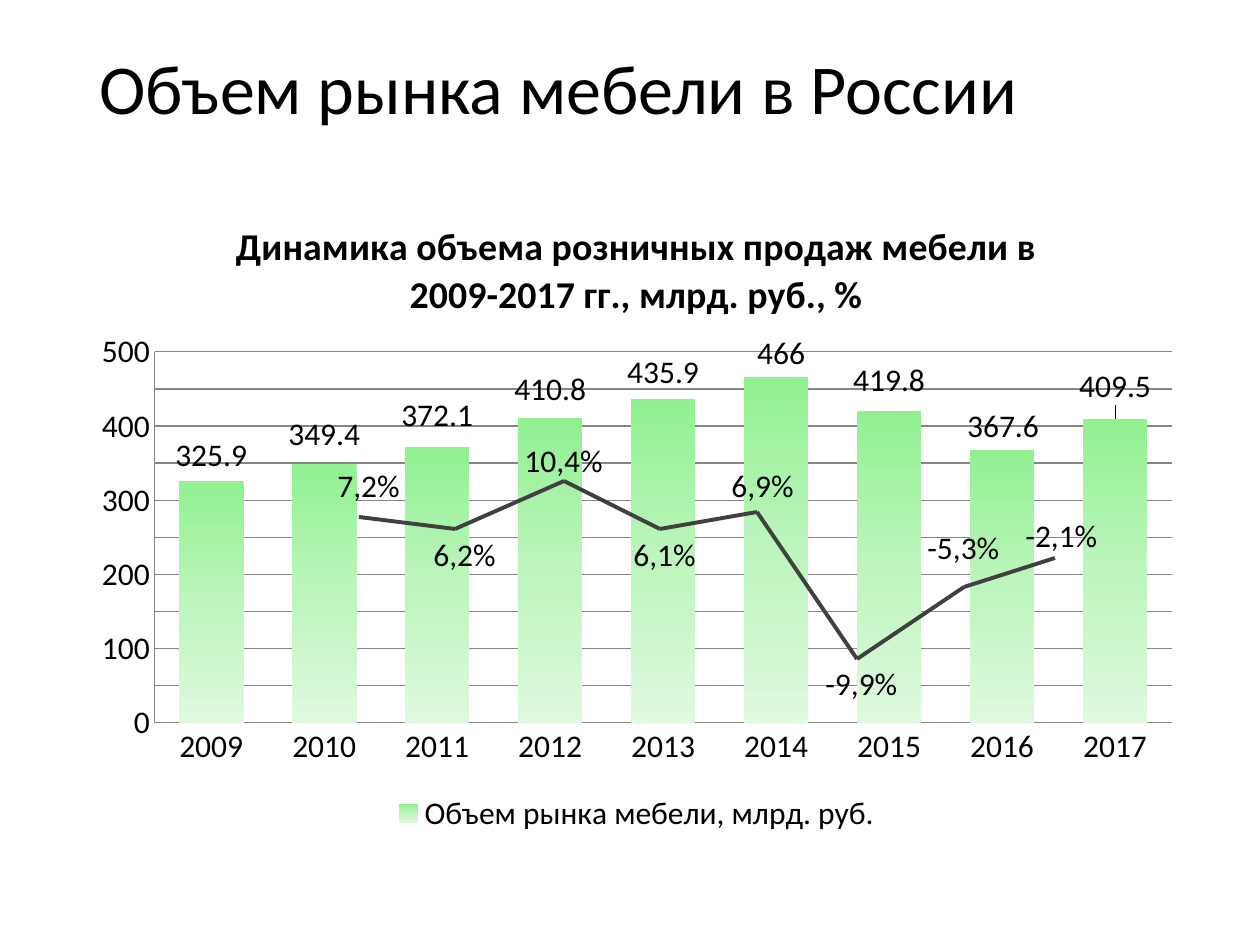
import pptx
import pptx.chart.data
import pptx.dml.color
import pptx.enum.chart
import pptx.enum.shapes
import pptx.enum.text
import pptx.oxml
import pptx.oxml.ns
import pptx.util
from lxml import etree

PX = 914400 / 126
COLORS = {"text": "000000", "line": "404040", "grid": "868686",
          "top": "91F191", "mid": "BDF5BD", "low": "DFF9DF"}
FONT = "Calibri"
qn = pptx.oxml.ns.qn


def emu(*vals):
    return [round(v * PX) for v in vals]


def rgb(name):
    return pptx.dml.color.RGBColor.from_string(COLORS[name])


def set_font(font, size=18, bold=False, color="text"):
    font.name = FONT
    font.size = pptx.util.Pt(size)
    font.bold = bold
    font.color.rgb = rgb(color)


def put_text(frame, text, spacing=None, **style):
    para = frame.paragraphs[0]
    run = para.add_run()
    run.text = text
    if spacing:
        para.line_spacing = spacing
    set_font(run.font, **style)


def layout(inner=False, **vals):
    """Manual chart layout, in shares of the chart area."""
    root = etree.Element(qn("c:layout"))
    man = etree.SubElement(root, qn("c:manualLayout"))
    if inner:
        for tag, val in (("layoutTarget", "inner"), ("xMode", "edge"), ("yMode", "edge")):
            etree.SubElement(man, qn("c:" + tag), val=val)
    for tag, val in vals.items():
        etree.SubElement(man, qn("c:" + tag), val=f"{val:.4f}")
    return root


class Deck:
    def __init__(self, wide, high):
        self.show = pptx.Presentation()
        self.show.slide_width, self.show.slide_height = emu(wide, high)
        self.slide = self.show.slides.add_slide(self.show.slide_layouts[6])

    def text(self, box, text, wrap=False, middle=False, **style):
        frame = self.slide.shapes.add_textbox(*emu(*box)).text_frame
        frame.word_wrap = wrap
        anchor = pptx.enum.text.MSO_ANCHOR
        frame.vertical_anchor = anchor.MIDDLE if middle else anchor.TOP
        put_text(frame, text, **style)

    def line(self, start, end):
        kind = pptx.enum.shapes.MSO_CONNECTOR.STRAIGHT
        line = self.slide.shapes.add_connector(kind, *emu(*start, *end))
        line.line.color.rgb = rgb("line")
        line.line.width = pptx.util.Pt(2.25)
        etree.SubElement(line._element.spPr, qn("a:effectLst"))

    def chart(self, box, title, name, cats, vals, shifts):
        enum = pptx.enum.chart
        data = pptx.chart.data.CategoryChartData()
        data.categories = cats
        data.add_series(name, vals)
        chart = self.slide.shapes.add_chart(
            enum.XL_CHART_TYPE.COLUMN_CLUSTERED, *emu(*box), data).chart
        set_font(chart.font)
        chart.has_title = True
        put_text(chart.chart_title.text_frame, title, size=21.6, bold=True)
        chart.chart_title.include_in_layout = False
        chart.has_legend = True
        chart.legend.position = enum.XL_LEGEND_POSITION.BOTTOM
        chart.legend.include_in_layout = False
        set_font(chart.legend.font)

        # Axes
        for axis in (chart.category_axis, chart.value_axis):
            axis.major_tick_mark = axis.minor_tick_mark = enum.XL_TICK_MARK.NONE
            axis.format.line.color.rgb = rgb("grid")
            set_font(axis.tick_labels.font)
        scale = chart.value_axis
        scale.minimum_scale, scale.maximum_scale, scale.major_unit = 0, 500, 50
        scale.has_major_gridlines = True
        scale.major_gridlines.format.line.color.rgb = rgb("grid")

        # Plot area
        area = chart._chartSpace.find(".//" + qn("c:plotArea"))
        for old in area.findall(qn("c:layout")):
            area.remove(old)
        area.insert(0, layout(True, x=0.068, y=0.246, w=0.912, h=0.574))

        # Columns with a three-stop gradient
        plot = chart.plots[0]
        plot.gap_width = 75
        plot.vary_by_categories = False
        bars = plot.series[0]
        bars.format.fill.gradient()
        bars.format.fill.gradient_angle = 270
        stops = bars._element.find(".//" + qn("a:gsLst"))
        for old in list(stops):
            stops.remove(old)
        for pos, key in ((0, "top"), (50, "mid"), (100, "low")):
            stop = etree.SubElement(stops, qn("a:gs"), pos=str(pos * 1000))
            etree.SubElement(stop, qn("a:srgbClr"), val=COLORS[key])

        # Value labels, each nudged by a few px
        labels = bars.data_labels
        labels.show_value = True
        set_font(labels.font)
        for i, (dx, dy) in enumerate(shifts):
            label = bars.points[i].data_label
            set_font(label.font)
            label.position = enum.XL_LABEL_POSITION.OUTSIDE_END
        for node, (dx, dy) in zip(bars._element.iter(qn("c:dLbl")), shifts):
            node.insert(1, layout(x=dx / box[2], y=dy / box[3]))


def main():
    deck = Deck(1260, 945)

    # Heading
    deck.text((87, 0, 1086, 184), "Объем рынка мебели в России",
              wrap=True, middle=True, size=40, spacing=0.9)

    # Market volume
    deck.chart(
        (79, 193, 1115, 646),
        "Динамика объема розничных продаж мебели в 2009-2017 гг., млрд. руб., %",
        "Объем рынка мебели, млрд. руб.",
        [str(year) for year in range(2009, 2018)],
        [325.9, 349.4, 372.1, 410.8, 435.9, 466, 419.8, 367.6, 409.5],
        [(0, -2), (0, -5), (0, -7), (0, -5), (0, -3), (5, 0), (0, -7), (1, 0), (0, -9)])

    # Growth line
    knots = [(359, 517), (455, 529), (564, 481), (660, 529),
             (757, 512), (857, 659), (964, 587), (1055, 558)]
    for start, end in zip(knots, knots[1:]):
        deck.line(start, end)

    # Growth rates
    rates = [("7,2%", 325, 460, 88), ("6,2%", 421, 529, 88), ("10,4%", 512, 435, 105),
             ("6,1%", 621, 529, 88), ("6,9%", 719, 460, 88), ("-9,9%", 813, 658, 98),
             ("-5,3%", 915, 522, 98), ("-2,1%", 1013, 510, 98)]
    for rate, left, top, wide in rates:
        deck.text((left, top, wide, 50), rate)

    deck.show.save("out.pptx")


if __name__ == "__main__":
    main()
